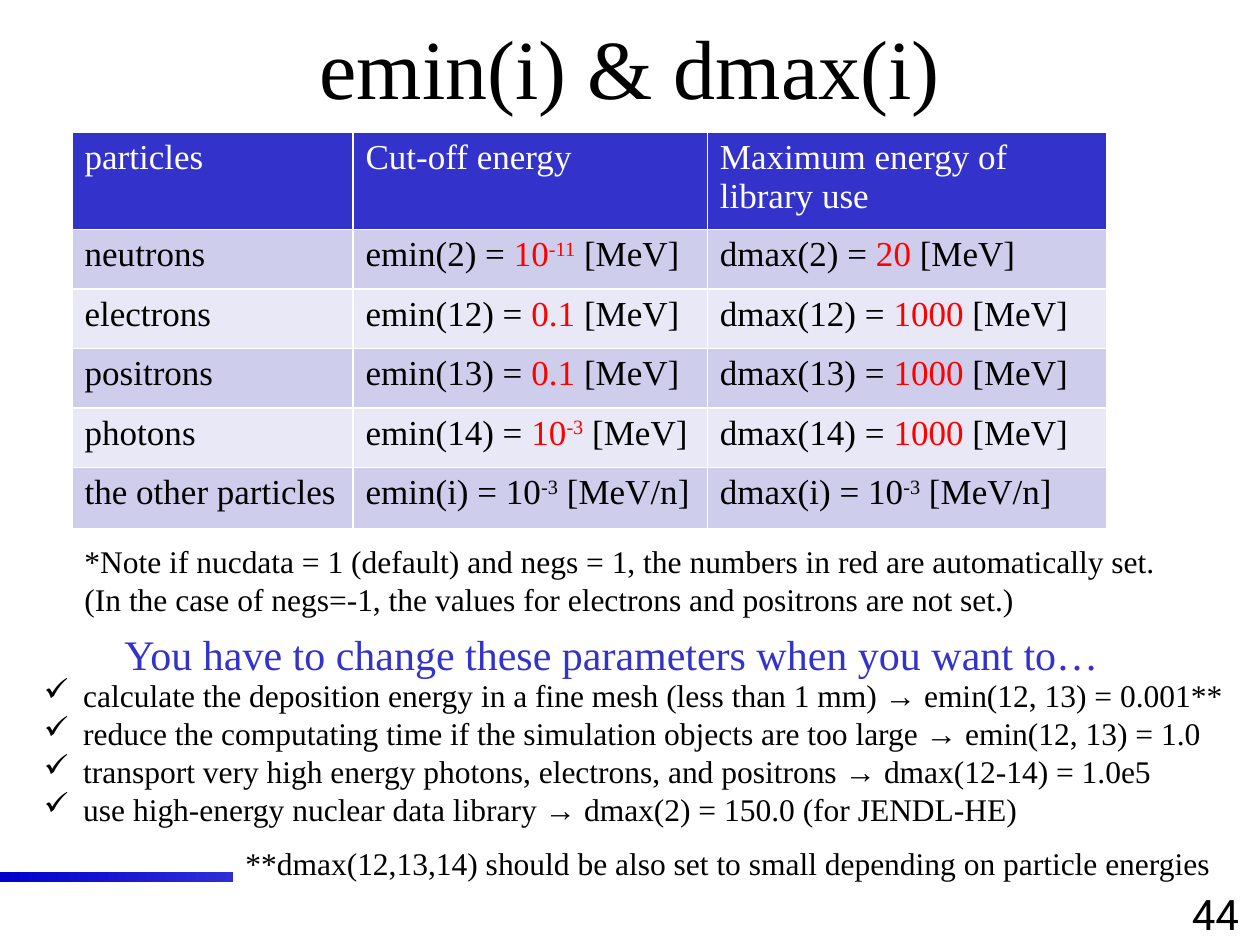
from lxml import etree
from pptx import Presentation
from pptx.dml.color import RGBColor
from pptx.enum import shapes, text
from pptx.oxml import ns
from pptx.util import Pt

BLACK = RGBColor(0x00, 0x00, 0x00)
WHITE = RGBColor(0xFF, 0xFF, 0xFF)
RED = RGBColor(0xFF, 0x00, 0x00)
BLUE = RGBColor(0x33, 0x33, 0xCC)
DEEP_BLUE = RGBColor(0x00, 0x00, 0xCC)
BAND_DARK = RGBColor(0xCE, 0xCE, 0xEC)
BAND_LIGHT = RGBColor(0xE8, 0xE8, 0xF6)
SERIF = "Times New Roman"
TITLE_ONLY = 5

COLUMN_WIDTHS = (160.5, 202.5, 228)
ROW_HEIGHTS = (55.5, 34, 34, 34, 34, 35)
HEADINGS = ("particles", "Cut-off energy", "Maximum energy of library use")
# particle, index, then (base, exponent) of emin and of dmax
LIMITS = (
    ("neutrons", "2", ("10", "-11"), ("20", "")),
    ("electrons", "12", ("0.1", ""), ("1000", "")),
    ("positrons", "13", ("0.1", ""), ("1000", "")),
    ("photons", "14", ("10", "-3"), ("1000", "")),
    ("the other particles", "i", ("10", "-3"), ("10", "-3")),
)
ADVICE = (
    "calculate the deposition energy in a fine mesh (less than 1 mm) → emin(12, 13) = 0.001**",
    "reduce the computating time if the simulation objects are too large → emin(12, 13) = 1.0",
    "transport very high energy photons, electrons, and positrons → dmax(12-14) = 1.0e5",
    "use high-energy nuclear data library → dmax(2) = 150.0 (for JENDL-HE)",
)
NOTE = (
    "*Note if nucdata = 1 (default) and negs = 1, the numbers in red are automatically set.",
    "(In the case of negs=-1, the values for electrons and positrons are not set.)",
)


def format_font(font, size, color=BLACK, name=SERIF):
    font.name = name
    font.size = Pt(size)
    font.bold = False
    font.color.rgb = color


def format_frame(frame, size, color=BLACK, name=SERIF):
    for para in frame.paragraphs:
        for span in para.runs:
            format_font(span.font, size, color, name)


def add_title(page, title):
    holder = page.shapes.title
    holder.left, holder.top, holder.width, holder.height = Pt(18), Pt(3.6), Pt(684), Pt(67.7)
    frame = holder.text_frame
    frame.text = title
    frame.vertical_anchor = text.MSO_ANCHOR.MIDDLE
    frame.paragraphs[0].alignment = text.PP_ALIGN.CENTER
    format_frame(frame, 48)


def add_text(page, area, lines, size, color=BLACK, name=SERIF, wrap=True):
    box = page.shapes.add_textbox(*map(Pt, area))
    frame = box.text_frame
    frame.word_wrap = wrap
    frame.text = "\n".join(lines)
    format_frame(frame, size, color, name)
    return box


def add_check_marks(box, indent):
    for para in box.text_frame.paragraphs:
        properties = para._p.get_or_add_pPr()
        properties.set("marL", str(Pt(indent)))
        properties.set("indent", str(-Pt(indent)))
        etree.SubElement(properties, ns.qn("a:buChar")).set("char", "✓")


def add_gradient_bar(page):
    bar = page.shapes.add_shape(shapes.MSO_SHAPE.RECTANGLE, Pt(0), Pt(498.2), Pt(717), Pt(6))
    bar.shadow.inherit = False
    bar.line.fill.background()
    bar.fill.gradient()
    bar.fill.gradient_angle = 0
    for stop, color in zip(bar.fill.gradient_stops, (DEEP_BLUE, WHITE)):
        stop.color.rgb = color


def write_limit(cell, name, index, value, particle_known):
    """Write e.g. emin(2) = 10^-11 [MeV], with the preset value in red."""
    base, exponent = value
    color = RED if particle_known else BLACK
    unit = " [MeV]" if particle_known else " [MeV/n]"
    para = cell.text_frame.paragraphs[0]
    spans = ((f"{name}({index}) = ", BLACK), (base, color), (exponent, color), (unit, BLACK))
    for position, (words, span_color) in enumerate(spans):
        if not words:
            continue
        span = para.add_run()
        span.text = words
        format_font(span.font, 20, span_color)
        if position == 2:
            span.font._element.set("baseline", "30000")


def add_limits_table(page):
    frame = page.shapes.add_table(
        len(ROW_HEIGHTS), len(COLUMN_WIDTHS),
        Pt(41.2), Pt(75.6), Pt(sum(COLUMN_WIDTHS)), Pt(sum(ROW_HEIGHTS)))
    table = frame.table
    for column, width in zip(table.columns, COLUMN_WIDTHS):
        column.width = Pt(width)
    for row, height in zip(table.rows, ROW_HEIGHTS):
        row.height = Pt(height)
    for column, heading in enumerate(HEADINGS):
        cell = table.cell(0, column)
        cell.text_frame.text = heading
        format_frame(cell.text_frame, 20, WHITE)
    for row, (particle, index, emin, dmax) in enumerate(LIMITS, 1):
        label = table.cell(row, 0).text_frame
        label.text = particle
        format_frame(label, 20)
        write_limit(table.cell(row, 1), "emin", index, emin, index != "i")
        write_limit(table.cell(row, 2), "dmax", index, dmax, index != "i")
    for row, cells in enumerate(table.rows):
        for cell in cells.cells:
            cell.fill.solid()
            cell.fill.fore_color.rgb = BLUE if row == 0 else (BAND_LIGHT, BAND_DARK)[row % 2]


def main():
    deck = Presentation()
    deck.slide_width, deck.slide_height = Pt(720), Pt(540)
    page = deck.slides.add_slide(deck.slide_layouts[TITLE_ONLY])

    add_gradient_bar(page)
    number = add_text(page, (666, 504, 57, 36), ["44"], 24, name="Roboto")
    number.text_frame.paragraphs[0].alignment = text.PP_ALIGN.CENTER
    add_title(page, "emin(i) & dmax(i)")
    advice = add_text(page, (18, 383, 693.4, 94.3), ADVICE, 18)
    add_check_marks(advice, 22.5)
    add_text(page, (64, 355.7, 576, 36.7),
             ["You have to change these parameters when you want to…"], 24, BLUE, wrap=False)
    add_limits_table(page)
    add_text(page, (41.2, 306, 637.2, 51), NOTE, 18, wrap=False)
    footnote = add_text(
        page, (133.2, 478.8, 584, 29),
        ["**dmax(12,13,14) should be also set to small depending on particle energies"], 18)
    footnote.fill.solid()
    footnote.fill.fore_color.rgb = WHITE

    deck.save("out.pptx")


if __name__ == "__main__":
    main()
